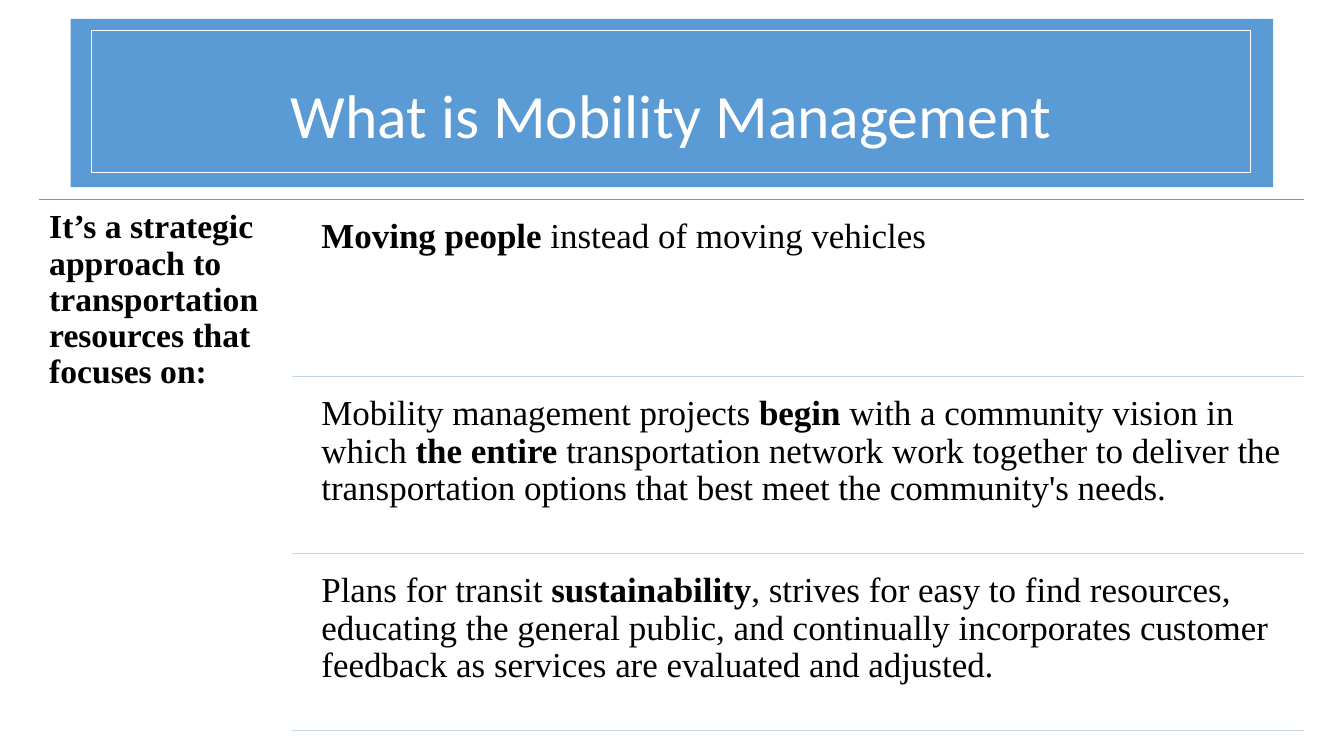
import pptx
import pptx.dml.color
import pptx.enum.shapes
import pptx.enum.text
import pptx.util
import lxml.etree
from dataclasses import dataclass

Pt = pptx.util.Pt
Color = pptx.dml.color.RGBColor.from_string


@dataclass(frozen=True)
class Theme:
    blue: str = "5B9BD5"
    top_rule: str = "599BD5"
    row_rule: str = "C3D4EB"
    white: str = "FFFFFF"
    black: str = "000000"
    title_font: str = "Calibri"
    body_font: str = "Times New Roman"
    title_size: int = 44
    lead_size: int = 24
    row_size: int = 25


theme = Theme()

presentation = pptx.Presentation()
presentation.slide_width, presentation.slide_height = Pt(960), Pt(540)
slide = presentation.slides.add_slide(presentation.slide_layouts[5])


def add_rule(left, top, color):
    rule = slide.shapes.add_connector(
        pptx.enum.shapes.MSO_CONNECTOR.STRAIGHT, Pt(left), Pt(top), Pt(931.7), Pt(top))
    rule.line.color.rgb = Color(color)
    rule.line.width = Pt(1)
    properties = rule.element.spPr
    lxml.etree.SubElement(properties, pptx.oxml.ns.qn("a:effectLst"))


def add_text(left, top, width, height, size, segments):
    box = slide.shapes.add_textbox(Pt(left), Pt(top), Pt(width), Pt(height))
    frame = box.text_frame
    frame.word_wrap = True
    frame.margin_left = frame.margin_right = Pt(7.2)
    frame.margin_top = frame.margin_bottom = Pt(7.2)
    paragraph = frame.paragraphs[0]
    paragraph.line_spacing = 0.9
    for text, bold in segments:
        run = paragraph.add_run()
        run.text = text
        run.font.name = theme.body_font
        run.font.size = Pt(size)
        run.font.bold = bold
        run.font.color.rgb = Color(theme.black)


# Banner and its inner frame
rectangle = pptx.enum.shapes.MSO_SHAPE.RECTANGLE
banner = slide.shapes.add_shape(rectangle, Pt(50.4), Pt(13.5), Pt(859), Pt(120.3))
banner.fill.solid()
banner.fill.fore_color.rgb = Color(theme.blue)
banner.line.fill.background()
banner.shadow.inherit = False

frame_outline = slide.shapes.add_shape(rectangle, Pt(65.5), Pt(22), Pt(828), Pt(101.5))
frame_outline.fill.background()
frame_outline.line.color.rgb = Color(theme.white)
frame_outline.line.width = Pt(0.75)
frame_outline.shadow.inherit = False

# Title, brought in front of the banner
title = slide.shapes.title
title.element.getparent().append(title.element)
title.left, title.top, title.width, title.height = Pt(84.2), Pt(37.4), Pt(790.6), Pt(96.5)
title.text_frame.text = "What is Mobility Management"
title.text_frame.word_wrap = True
title.text_frame.vertical_anchor = pptx.enum.text.MSO_ANCHOR.MIDDLE
heading = title.text_frame.paragraphs[0]
heading.alignment = pptx.enum.text.PP_ALIGN.CENTER
heading.line_spacing = 0.85
heading_font = heading.runs[0].font
heading_font.name = theme.title_font
heading_font.size = Pt(theme.title_size)
heading_font.color.rgb = Color(theme.white)

# Lead statement on the left
add_rule(28.1, 142.6, theme.top_rule)
add_text(28.1, 142.6, 180.7, 384.5, theme.lead_size, [
    ("It’s a strategic approach to transportation resources that focuses on:", True)])

# Focus points, each closed by a rule
focus_points = [
    [("Moving people ", True), ("instead of moving vehicles", False)],
    [("Mobility management projects ", False), ("begin", True),
     (" with a community vision in which ", False), ("the entire ", True),
     ("transportation network work together to deliver the transportation options "
      "that best meet the community's needs.", False)],
    [("Plans for transit ", False), ("sustainability", True),
     (", strives for easy to find resources, educating the general public, and "
      "continually incorporates customer feedback as services are evaluated and "
      "adjusted.", False)],
]
row_height, row_gap = 120.2, 6.2
for index, segments in enumerate(focus_points):
    top = 148.6 + index * (row_height + row_gap)
    add_text(222.5, top, 709.2, row_height, theme.row_size, segments)
    add_rule(208.8, top + row_height, theme.row_rule)

presentation.save("out.pptx")
